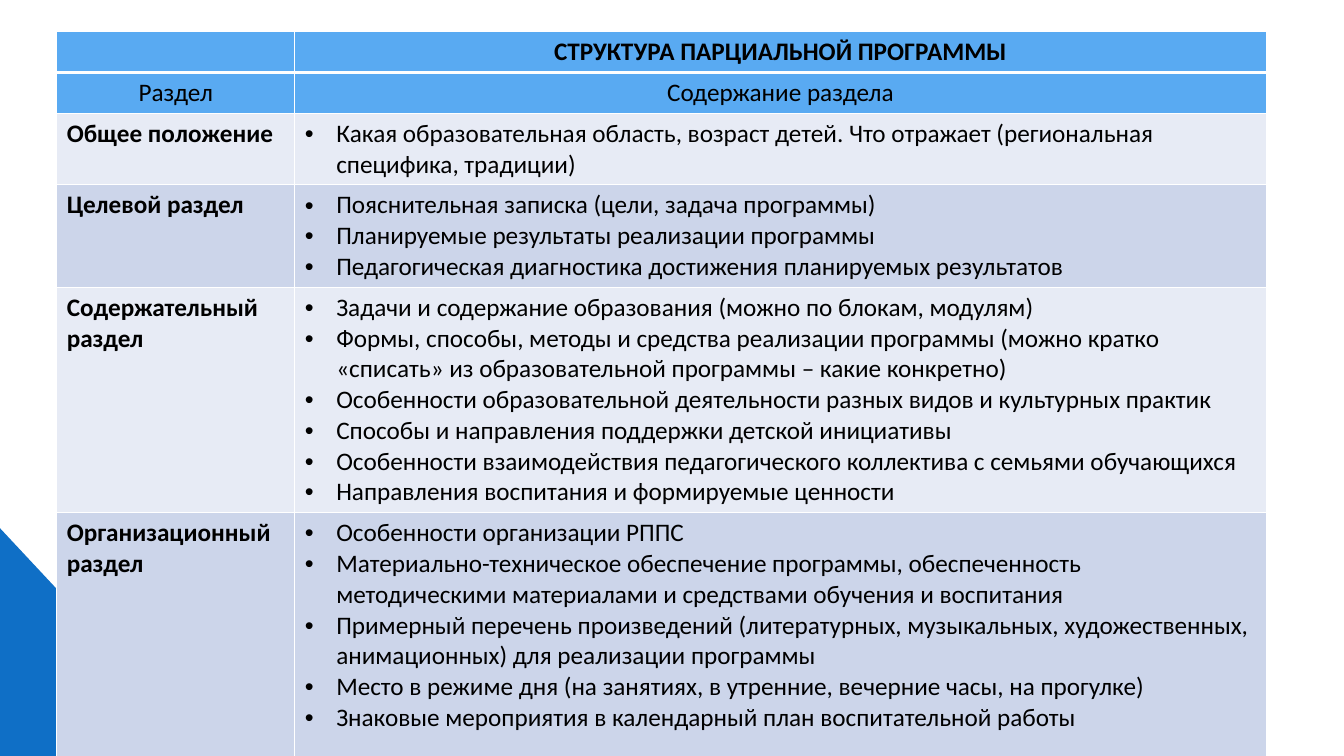
from lxml import etree
from pptx import Presentation
from pptx.dml.color import RGBColor
from pptx.enum.shapes import MSO_SHAPE
from pptx.enum.text import PP_ALIGN
from pptx.oxml.ns import qn
from pptx.util import Pt

TRIANGLE = MSO_SHAPE.RIGHT_TRIANGLE
CENTER = PP_ALIGN.CENTER
LEFT = PP_ALIGN.LEFT

COLORS = {
    "accent": "0F6FC6",
    "header": "59AAF2",
    "light": "E7EBF5",
    "dark": "CCD5EA",
    "border": "FFFFFF",
    "text": "000000",
}

HEADINGS = [
    ("", "СТРУКТУРА ПАРЦИАЛЬНОЙ ПРОГРАММЫ", True),
    ("Раздел", "Содержание раздела", False),
]

SECTIONS = [
    ("Общее положение", [
        "Какая образовательная область, возраст детей. Что отражает (региональная специфика, традиции)",
    ]),
    ("Целевой раздел", [
        "Пояснительная записка (цели, задача программы)",
        "Планируемые результаты реализации программы",
        "Педагогическая диагностика достижения планируемых результатов",
    ]),
    ("Содержательный раздел", [
        "Задачи и содержание образования (можно по блокам, модулям)",
        "Формы, способы, методы и средства реализации программы (можно кратко «списать» из образовательной программы – какие конкретно)",
        "Особенности образовательной деятельности разных видов и культурных практик",
        "Способы и направления поддержки детской инициативы",
        "Особенности взаимодействия педагогического коллектива с семьями обучающихся",
        "Направления воспитания и формируемые ценности",
    ]),
    ("Организационный раздел", [
        "Особенности организации РППС",
        "Материально-техническое обеспечение программы, обеспеченность методическими материалами и средствами обучения и воспитания",
        "Примерный перечень произведений (литературных, музыкальных, художественных, анимационных) для реализации программы",
        "Место в режиме дня (на занятиях, в утренние, вечерние часы, на прогулке)",
        "Знаковые мероприятия в календарный план воспитательной работы",
    ]),
]

COLUMN_WIDTHS = [170, 694]
ROW_HEIGHTS = [29.2, 29.2, 51, 73, 161, 175.7]


class Page:
    """Style and drawing methods for the current slide."""

    font = "Calibri"
    size = 18
    indent = 22.5

    def __init__(self, deck):
        self.slide = deck.slides.add_slide(deck.slide_layouts[6])

    def color(self, name):
        return RGBColor.from_string(COLORS[name])

    def shape(self, kind, left, top, width, height, fill):
        shape = self.slide.shapes.add_shape(kind, Pt(left), Pt(top), Pt(width), Pt(height))
        shape.shadow.inherit = False
        shape.fill.solid()
        shape.fill.fore_color.rgb = self.color(fill)
        shape.line.fill.background()

    def table(self, left, top, widths, heights):
        frame = self.slide.shapes.add_table(
            len(heights), len(widths), Pt(left), Pt(top), Pt(sum(widths)), Pt(sum(heights)))
        table = frame.table
        for column, width in zip(table.columns, widths):
            column.width = Pt(width)
        for row, height in zip(table.rows, heights):
            row.height = Pt(height)
        return table

    def border(self, cell, side, width):
        line = etree.SubElement(cell._tc.get_or_add_tcPr(), qn(f"a:ln{side}"), w=str(Pt(width)))
        fill = etree.SubElement(line, qn("a:solidFill"))
        etree.SubElement(fill, qn("a:srgbClr"), val=COLORS["border"])

    def bullet(self, para):
        properties = para._p.get_or_add_pPr()
        properties.set("marL", str(Pt(self.indent)))
        properties.set("indent", str(-Pt(self.indent)))
        etree.SubElement(properties, qn("a:buFont"), typeface="Arial")
        etree.SubElement(properties, qn("a:buChar"), char="•")

    def cell(self, cell, lines, fill, bold=False, align=LEFT, bullets=False, top=1, bottom=1):
        for side, width in zip("LRTB", (1, 1, top, bottom)):
            self.border(cell, side, width)
        cell.fill.solid()
        cell.fill.fore_color.rgb = self.color(fill)
        frame = cell.text_frame
        for index, line in enumerate(lines):
            para = frame.add_paragraph() if index else frame.paragraphs[0]
            if line:
                para.text = line
            para.alignment = align
            if bullets:
                self.bullet(para)
            para.font.name = self.font
            para.font.size = Pt(self.size)
            para.font.bold = bold
            para.font.color.rgb = self.color("text")


def main():
    deck = Presentation()
    deck.slide_width, deck.slide_height = Pt(960), Pt(540)
    page = Page(deck)
    page.shape(TRIANGLE, 0, 377.3, 152, 162.7, "accent")

    table = page.table(40.5, 22.5, COLUMN_WIDTHS, ROW_HEIGHTS)
    for row, (*titles, bold) in enumerate(HEADINGS):
        for column, title in enumerate(titles):
            page.cell(table.cell(row, column), [title], "header", bold, CENTER,
                      top=3 if row else 1, bottom=1 if row else 3)
    for index, (name, items) in enumerate(SECTIONS):
        row = index + len(HEADINGS)
        fill = "dark" if index % 2 else "light"
        page.cell(table.cell(row, 0), [name], fill, bold=True)
        page.cell(table.cell(row, 1), items, fill, bullets=True)

    deck.save("out.pptx")


if __name__ == "__main__":
    main()
